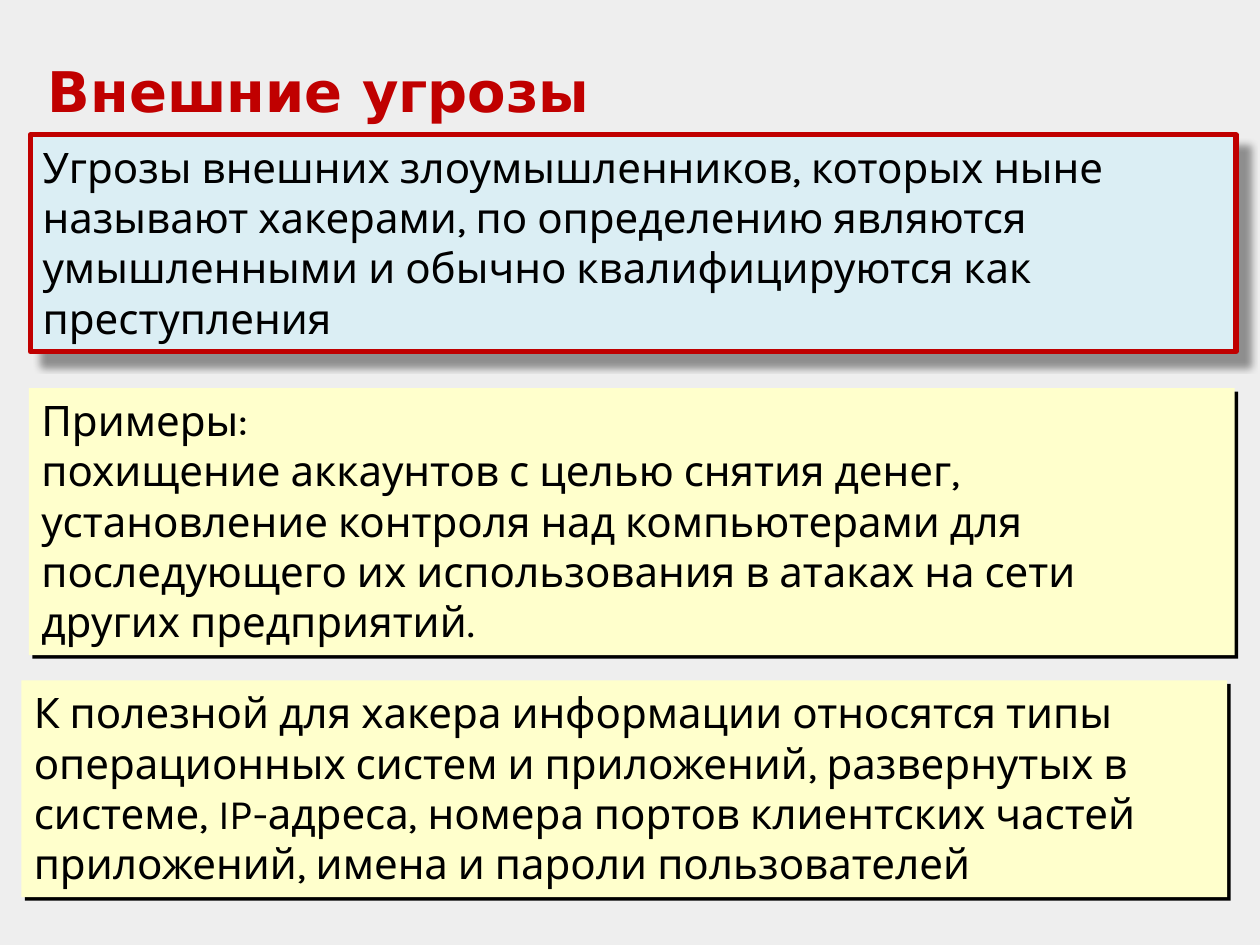
import pptx
import pptx.dml.color
import pptx.enum.shapes
import pptx.enum.text
import pptx.oxml
import pptx.oxml.ns
import pptx.util
from pptx.dml.color import RGBColor
from pptx.util import Inches

BACKGROUND = RGBColor(0xEE, 0xEE, 0xEE)
RED = RGBColor(0xC0, 0x00, 0x00)
BLACK = RGBColor(0x00, 0x00, 0x00)
BLUE = RGBColor(0xDB, 0xEE, 0xF4)
YELLOW = RGBColor(0xFF, 0xFF, 0xCC)

DEFINITION = [
    "Угрозы внешних злоумышленников, которых ныне называют хакерами, по определению "
    "являются умышленными и обычно квалифицируются как преступления",
]
EXAMPLES = [
    "Примеры:",
    "похищение аккаунтов с целью снятия денег,",
    "установление контроля над компьютерами для последующего их использования "
    "в атаках на сети других предприятий.",
]
USEFUL_DATA = [
    "К полезной для хакера информации относятся типы операционных систем и приложений, "
    "развернутых в системе, IP-адреса, номера портов клиентских частей приложений, "
    "имена и пароли пользователей",
]


def write_text(tf, lines, size=24, font="Karla", color=BLACK, bold=False,
               anchor=pptx.enum.text.MSO_ANCHOR.TOP):
    """Fill a text frame with one left-aligned paragraph per line."""
    tf.word_wrap = True
    tf.auto_size = pptx.enum.text.MSO_AUTO_SIZE.NONE
    tf.vertical_anchor = anchor
    for i, line in enumerate(lines):
        p = tf.add_paragraph() if i else tf.paragraphs[0]
        p.alignment = pptx.enum.text.PP_ALIGN.LEFT
        r = p.add_run()
        r.text = line
        r.font.size = pptx.util.Pt(size)
        r.font.name = font
        r.font.bold = bold
        r.font.color.rgb = color


def add_shadow(sp, blur, distance, opacity):
    """Give a shape a black shadow falling to the lower right."""
    sp.shadow.inherit = False
    effects = sp._element.spPr.find(pptx.oxml.ns.qn("a:effectLst"))
    effects.append(pptx.oxml.parse_xml(
        f'<a:outerShdw {pptx.oxml.ns.nsdecls("a")} blurRad="{pptx.util.Pt(blur)}" '
        f'dist="{pptx.util.Pt(distance)}" dir="2700000" algn="tl" rotWithShape="0">'
        f'<a:srgbClr val="{BLACK}"><a:alpha val="{opacity * 1000}"/></a:srgbClr>'
        '</a:outerShdw>'))


def add_title(s, text):
    """Place and format the slide title."""
    sp = s.shapes.title
    sp.left, sp.top = Inches(0.28), Inches(0.36)
    sp.width, sp.height = Inches(9.37), Inches(0.71)
    write_text(sp.text_frame, [text], size=32, font="DejaVu Sans", color=RED, bold=True,
               anchor=pptx.enum.text.MSO_ANCHOR.MIDDLE)


def add_panel(s, lines, left, top, height, fill=YELLOW, border=None,
              blur=0, distance=2.8, opacity=100):
    """Add a filled text panel with a shadow and an optional border."""
    sp = s.shapes.add_shape(pptx.enum.shapes.MSO_SHAPE.RECTANGLE, Inches(left),
                            Inches(top), Inches(9.57), Inches(height))
    sp.fill.solid()
    sp.fill.fore_color.rgb = fill
    if border is None:
        sp.line.fill.background()
    else:
        sp.line.color.rgb = border
        sp.line.width = pptx.util.Pt(3)
    add_shadow(sp, blur, distance, opacity)
    write_text(sp.text_frame, lines)


def main():
    """Build and save the slide."""
    prs = pptx.Presentation()
    prs.slide_width, prs.slide_height = Inches(10), Inches(7.5)
    s = prs.slides.add_slide(prs.slide_layouts[5])
    s.background.fill.solid()
    s.background.fill.fore_color.rgb = BACKGROUND
    add_title(s, "Внешние угрозы")
    add_panel(s, DEFINITION, 0.24, 1.07, 1.72, fill=BLUE, border=RED,
              blur=4, distance=10, opacity=40)
    add_panel(s, EXAMPLES, 0.23, 3.08, 2.12)
    add_panel(s, USEFUL_DATA, 0.17, 5.4, 1.72)
    prs.save("out.pptx")


if __name__ == "__main__":
    main()
